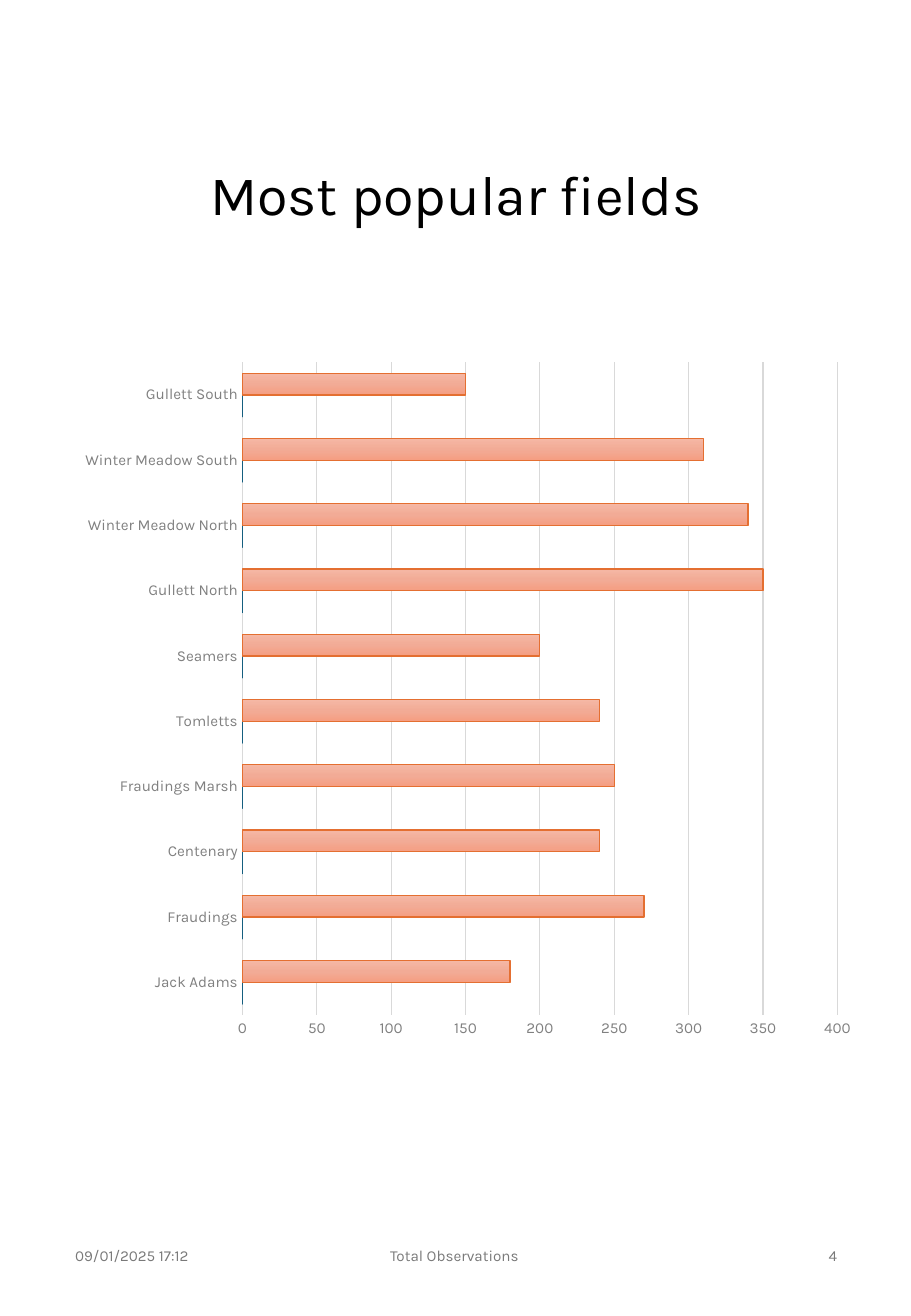
import dataclasses

import lxml.etree
import pptx
import pptx.chart.data
import pptx.dml.color
import pptx.enum.chart
import pptx.enum.text
import pptx.oxml
import pptx.oxml.ns
import pptx.util

PX = 9144  # EMU in one px, 100 px to the inch
ALIGN = pptx.enum.text.PP_ALIGN
qn = pptx.oxml.ns.qn


@dataclasses.dataclass(frozen=True)
class Theme:
    font: str = "Karla"
    ink: str = "000000"
    footer: str = "797979"
    axis: str = "808080"
    grid: str = "D9D9D9"
    blue_line: str = "155E7F"
    blue_fill: tuple = ("9EAFBF", "91A3B4", "7C95AB")
    orange_line: str = "E46F31"
    orange_fill: tuple = ("F5B8A5", "F2AB96", "F59E82")
    title_size: int = 33
    chart_size: int = 10
    small_size: int = 9
    line_width: float = 0.75


THEME = Theme()
FIELDS = {
    "Jack Adams": 180,
    "Fraudings": 270,
    "Centenary": 240,
    "Fraudings Marsh": 250,
    "Tomletts": 240,
    "Seamers": 200,
    "Gullett North": 350,
    "Winter Meadow North": 340,
    "Winter Meadow South": 310,
    "Gullett South": 150,
}


def emu(box):
    return [pptx.util.Emu(n * PX) for n in box]


def rgb(color):
    return pptx.dml.color.RGBColor.from_string(color)


def style_font(font, size, color):
    font.name = THEME.font
    font.size = pptx.util.Pt(size)
    font.bold = False
    font.color.rgb = rgb(color)


def style_line(line, color):
    line.color.rgb = rgb(color)
    line.width = pptx.util.Pt(THEME.line_width)


def write(sp, text, size, color, align=ALIGN.LEFT, spacing=None):
    tf = sp.text_frame
    tf.word_wrap = True
    tf.auto_size = pptx.enum.text.MSO_AUTO_SIZE.NONE
    tf.vertical_anchor = pptx.enum.text.MSO_ANCHOR.MIDDLE
    p = tf.paragraphs[0]
    p.alignment = align
    p.line_spacing = spacing
    r = p.add_run()
    r.text = text
    style_font(r.font, size, color)


def add_title(s, box, text):
    sp = s.shapes.title
    sp.left, sp.top, sp.width, sp.height = emu(box)
    write(sp, text, THEME.title_size, THEME.ink, align=ALIGN.CENTER, spacing=0.9)


def add_footer(s, box, date, name, number):
    left, top, width, height = box
    side, middle = 169, 253
    parts = [
        (date, left, side, ALIGN.LEFT),
        (name, left + (width - middle) // 2, middle, ALIGN.CENTER),
        (number, left + width - side, side, ALIGN.RIGHT),
    ]
    for text, x, w, align in parts:
        sp = s.shapes.add_textbox(*emu((x, top, w, height)))
        write(sp, text, THEME.small_size, THEME.footer, align=align)


def fill_gradient(fmt, colors):
    """Three even stops from top to bottom, which the public gradient cannot hold."""
    fmt.fill.gradient()
    fmt.fill.gradient_angle = 270
    stops = fmt.fill._fill._gradFill.find(qn("a:gsLst"))
    for stop in list(stops):
        stops.remove(stop)
    for i, color in enumerate(colors):
        gs = lxml.etree.SubElement(stops, qn("a:gs"), pos=str(i * 50000))
        lxml.etree.SubElement(gs, qn("a:srgbClr"), val=color)


def place_plot(chart, x, y, w, h):
    """Fix the inner plot area, in fractions of the chart."""
    area = chart._chartSpace.find(".//" + qn("c:plotArea"))
    for old in area.findall(qn("c:layout")):
        area.remove(old)
    layout = pptx.oxml.parse_xml(
        f"<c:layout {pptx.oxml.ns.nsdecls('c')}><c:manualLayout/></c:layout>")
    area.insert(0, layout)
    settings = {"layoutTarget": "inner", "xMode": "edge", "yMode": "edge",
                "x": x, "y": y, "w": w, "h": h}
    for tag, val in settings.items():
        lxml.etree.SubElement(layout[0], qn("c:" + tag), val=str(val))


def style_axis(axis):
    axis.major_tick_mark = axis.minor_tick_mark = pptx.enum.chart.XL_TICK_MARK.NONE
    style_font(axis.tick_labels.font, THEME.small_size, THEME.axis)


def add_field_chart(s, box, fields):
    data = pptx.chart.data.CategoryChartData()
    data.categories = list(fields)
    data.add_series("Series 1", [0] * len(fields))
    data.add_series("Series 2", list(fields.values()))
    kind = pptx.enum.chart.XL_CHART_TYPE.BAR_CLUSTERED
    chart = s.shapes.add_chart(kind, *emu(box), data).chart
    chart.has_legend = False
    chart.has_title = False
    style_font(chart.font, THEME.chart_size, THEME.ink)
    place_plot(chart, 0.22, 0.09, 0.73, 0.79)

    plot = chart.plots[0]
    plot.gap_width = 100
    plot.overlap = 0
    plot.vary_by_categories = False
    looks = [(THEME.blue_fill, THEME.blue_line), (THEME.orange_fill, THEME.orange_line)]
    for series, (fill, line) in zip(plot.series, looks):
        fill_gradient(series.format, fill)
        style_line(series.format.line, line)

    style_axis(chart.category_axis)
    style_line(chart.category_axis.format.line, THEME.grid)
    values = chart.value_axis
    style_axis(values)
    values.format.line.fill.background()
    values.minimum_scale, values.maximum_scale, values.major_unit = 0, 400, 50
    values.has_major_gridlines = True
    style_line(values.major_gridlines.format.line, THEME.grid)


def main():
    prs = pptx.Presentation()
    prs.slide_width, prs.slide_height = emu((750, 1083))
    s = prs.slides.add_slide(prs.slide_layouts[5])
    add_title(s, (52, 58, 647, 209), "Most popular fields")
    add_footer(s, (52, 1004, 647, 58), "09/01/2025 17:12", "Total Observations ", "4")
    add_field_chart(s, (52, 237, 671, 680), FIELDS)
    prs.save("out.pptx")


if __name__ == "__main__":
    main()
